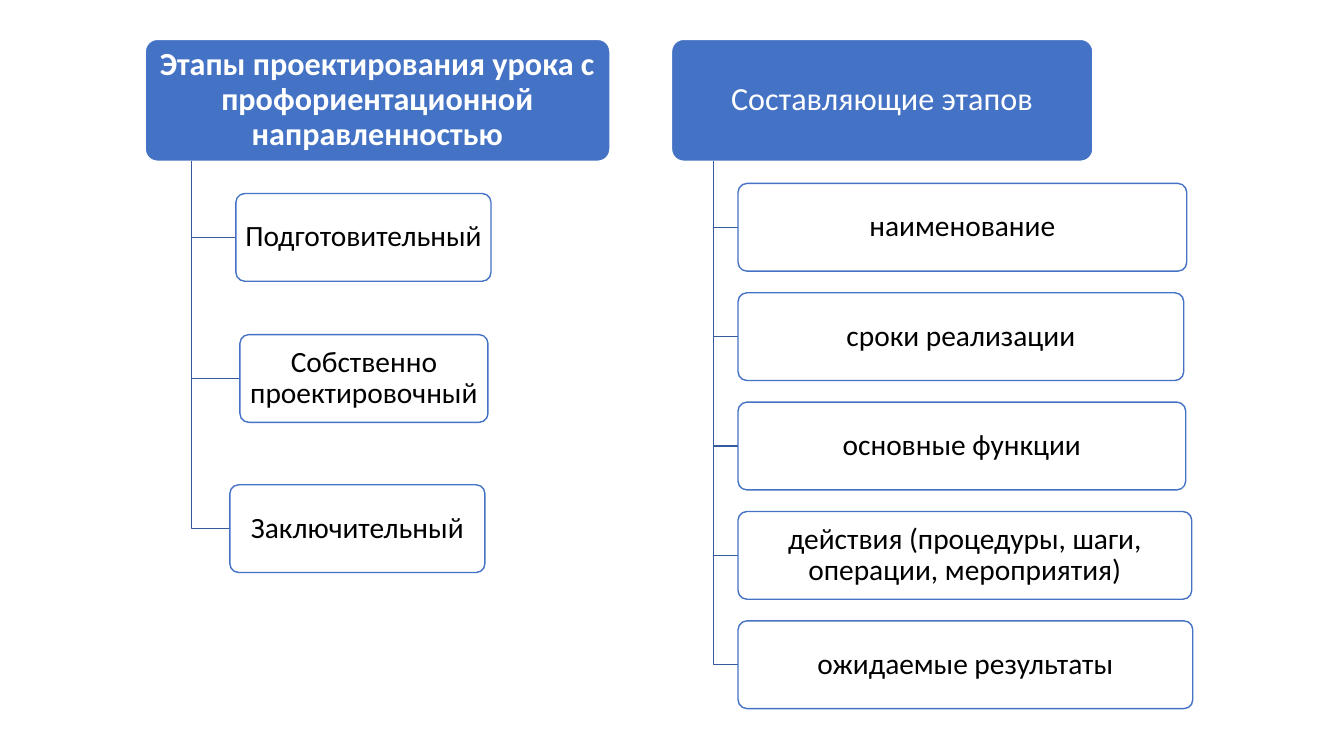
from lxml.etree import SubElement
from pptx import Presentation
from pptx.dml.color import RGBColor
from pptx.enum.shapes import MSO_SHAPE
from pptx.enum.text import MSO_ANCHOR, PP_ALIGN
from pptx.oxml.ns import qn
from pptx.util import Inches, Pt

COLORS = {"blue": "4472C4", "branch": "365B9D", "white": "FFFFFF", "black": "000000"}
HEADER_HEIGHT = 1.21
ITEM_HEIGHT = 0.87
ITEM_OPACITY = 90


def color(name):
    return RGBColor.from_string(COLORS[name])


def add_card(slide, box, text, fill, line, ink, size, inset, bold=False):
    card = slide.shapes.add_shape(MSO_SHAPE.ROUNDED_RECTANGLE, *map(Inches, box))
    card.adjustments[0] = 0.1
    card.shadow.inherit = False
    card.fill.solid()
    card.fill.fore_color.rgb = color(fill)
    card.line.color.rgb = color(line)
    card.line.width = Pt(1)
    frame = card.text_frame
    frame.word_wrap = True
    frame.vertical_anchor = MSO_ANCHOR.MIDDLE
    frame.margin_left = frame.margin_right = Inches(inset)
    frame.margin_top = frame.margin_bottom = Inches(0.03)
    frame.text = text
    paragraph = frame.paragraphs[0]
    paragraph.alignment = PP_ALIGN.CENTER
    paragraph.line_spacing = 0.9
    paragraph.font.name = "Calibri"
    paragraph.font.size = Pt(size)
    paragraph.font.bold = bold
    paragraph.font.color.rgb = color(ink)
    return card


def add_branch(slide, trunk_x, start_y, end_x, end_y):
    builder = slide.shapes.build_freeform(Inches(trunk_x), Inches(start_y))
    corners = [(trunk_x, end_y), (end_x, end_y)]
    builder.add_line_segments([(Inches(x), Inches(y)) for x, y in corners], close=False)
    branch = builder.convert_to_shape()
    branch.shadow.inherit = False
    branch.fill.background()
    branch.line.color.rgb = color("branch")
    branch.line.width = Pt(1)


def add_hierarchy(slide, left, top, width, heading, bold, items):
    add_card(slide, (left, top, width, HEADER_HEIGHT), heading,
             "blue", "white", "white", 23, 0.05, bold)
    trunk_x = left + width / 10
    for text, indent, drop, item_width in items:
        item_left, item_top = left + indent, top + drop
        add_branch(slide, trunk_x, top + HEADER_HEIGHT,
                   item_left, item_top + ITEM_HEIGHT / 2)
        item = add_card(slide, (item_left, item_top, item_width, ITEM_HEIGHT), text,
                        "white", "blue", "black", 21, 0.04)
        fill_color = item.fill._xPr.find(qn("a:solidFill"))[0]
        SubElement(fill_color, qn("a:alpha"), val=str(ITEM_OPACITY * 1000))


def main():
    presentation = Presentation()
    presentation.slide_width = Inches(13.33)
    presentation.slide_height = Inches(7.5)
    slide = presentation.slides.add_slide(presentation.slide_layouts[6])

    stages = [
        ("Подготовительный", 0.9, 1.53, 2.53),
        ("Собственно проектировочный", 0.94, 2.93, 2.46),
        ("Заключительный", 0.84, 4.42, 2.53),
    ]
    add_hierarchy(slide, 1.44, 0.39, 4.61,
                  "Этапы проектирования урока с профориентационной направленностью",
                  True, stages)

    component_widths = {
        "наименование": 4.45,
        "сроки реализации": 4.42,
        "основные функции": 4.44,
        "действия (процедуры, шаги, операции, мероприятия)": 4.5,
        "ожидаемые результаты": 4.51,
    }
    first_drop, last_drop = 1.43, 5.77
    pitch = (last_drop - first_drop) / (len(component_widths) - 1)
    components = [(text, 0.66, first_drop + row * pitch, width)
                  for row, (text, width) in enumerate(component_widths.items())]
    add_hierarchy(slide, 6.66, 0.39, 4.18, "Составляющие этапов", False, components)

    presentation.save("out.pptx")


if __name__ == "__main__":
    main()
